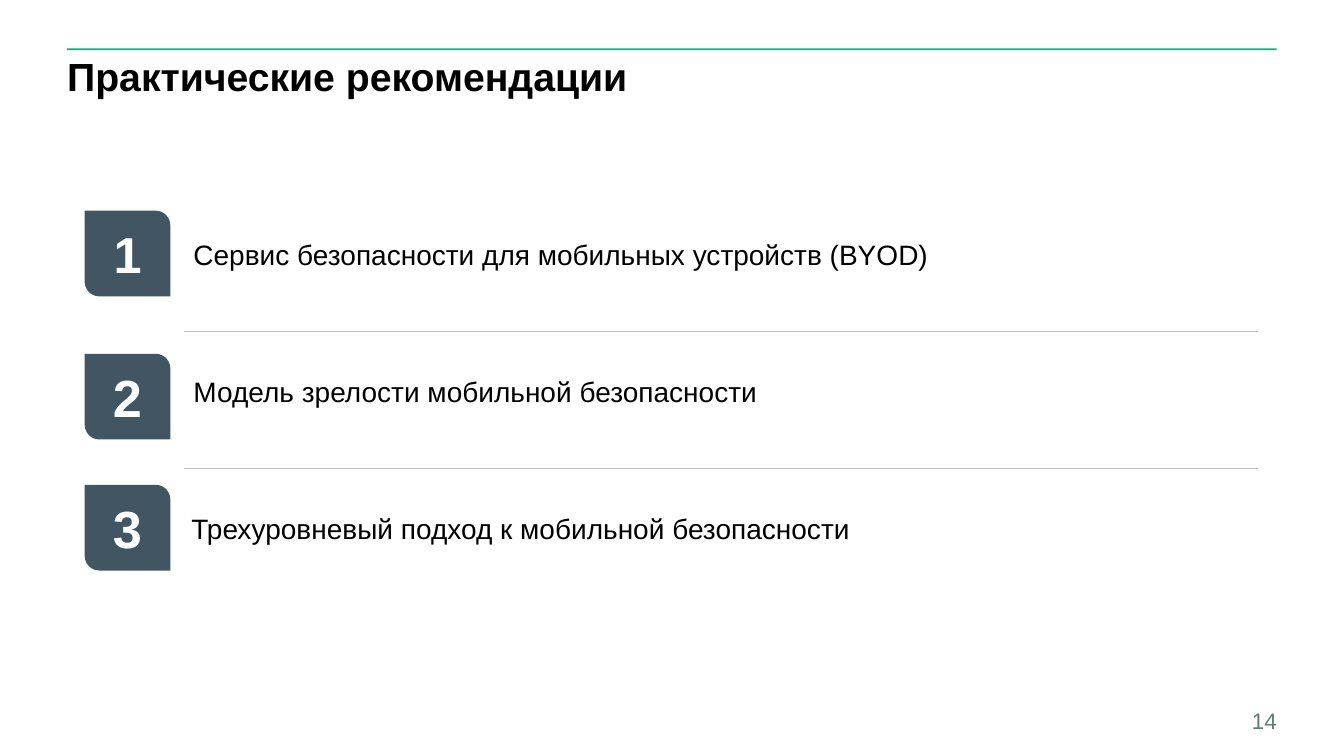
from dataclasses import dataclass, field
from typing import Any

from lxml import etree
from pptx import Presentation
from pptx import util as u
from pptx.dml.color import RGBColor
from pptx.enum import shapes, text
from pptx.oxml import ns

COLUMNS, ROWS = 80, 45


@dataclass(frozen=True)
class Theme:
    font: str = "Arial"
    accent: str = "00B388"
    badge: str = "425563"
    divider: str = "BFBFBF"
    ink: str = "000000"
    light: str = "FFFFFF"
    page_number: str = "617D78"
    title_size: float = 28
    item_size: float = 20
    number_size: float = 16


@dataclass(frozen=True)
class Area:
    column: float
    row: float
    columns: float
    rows: float


@dataclass(frozen=True)
class Recommendation:
    wording: str
    badge_row: float
    badge_size: float = 37.3
    text_column: float = 10.92


@dataclass(frozen=True)
class TextStyle:
    size: float
    color: str
    bold: bool = False
    frame: dict[str, Any] = field(default_factory=dict)
    para: dict[str, Any] = field(default_factory=dict)


THEME = Theme()
NO_MARGINS = dict.fromkeys(
    ("margin_left", "margin_top", "margin_right", "margin_bottom"), 0)
MIDDLE = {"word_wrap": True, "vertical_anchor": text.MSO_ANCHOR.MIDDLE}

RECOMMENDATIONS = [
    Recommendation("Сервис безопасности для мобильных устройств (BYOD)", 12.54, 36),
    Recommendation("Модель зрелости мобильной безопасности", 21.06),
    Recommendation("Трехуровневый подход к мобильной безопасности", 28.86,
                   text_column=10.8),
]
FIRST_ROW, ROW_STEP, ITEM_ROWS = 11.94, 8.16, 6.42
DIVIDER_OFFSET, DIVIDER_LEFT, DIVIDER_RIGHT = 7.8, 10.98, 74.88
BADGE_LEFT, BADGE_SIDE = 5.04, 5.1


def across(columns: float) -> int:
    return u.Inches(columns * 13.333 / COLUMNS)


def down(rows: float) -> int:
    return u.Inches(rows * 7.5 / ROWS)


def bounds(area: Area) -> tuple[int, int, int, int]:
    return (across(area.column), down(area.row),
            across(area.columns), down(area.rows))


def apply(target: Any, values: dict[str, Any]) -> None:
    for name, value in values.items():
        setattr(target, name, value)


def write(box: Any, wording: str, style: TextStyle) -> None:
    frame = box.text_frame
    apply(frame, style.frame)
    para = frame.paragraphs[0]
    apply(para, style.para)
    span = para.add_run()
    span.text = wording
    apply(span.font, {"name": THEME.font, "size": u.Pt(style.size),
                      "bold": style.bold})
    span.font.color.rgb = RGBColor.from_string(style.color)


def add_block(page: Any, kind: shapes.MSO_SHAPE, area: Area, color: str) -> Any:
    block = page.shapes.add_shape(kind, *bounds(area))
    block.shadow.inherit = False
    block.fill.solid()
    block.fill.fore_color.rgb = RGBColor.from_string(color)
    block.line.fill.background()
    return block


def add_text(page: Any, area: Area, wording: str, style: TextStyle) -> None:
    write(page.shapes.add_textbox(*bounds(area)), wording, style)


def add_divider(page: Any, row: float) -> None:
    divider = page.shapes.add_connector(
        shapes.MSO_CONNECTOR.STRAIGHT,
        across(DIVIDER_LEFT), down(row), across(DIVIDER_RIGHT), down(row))
    divider.line.color.rgb = RGBColor.from_string(THEME.divider)
    divider.line.width = u.Pt(1)
    etree.SubElement(divider._element.spPr, ns.qn("a:effectLst"))


def add_title(page: Any, wording: str) -> None:
    title = page.shapes.title
    left, top, width, height = bounds(Area(4, 3.42, 72, 5.58))
    apply(title, {"left": left, "top": top, "width": width, "height": height})
    write(title, wording, TextStyle(
        THEME.title_size, THEME.ink, True,
        {**NO_MARGINS, "word_wrap": True, "auto_size": text.MSO_AUTO_SIZE.NONE,
         "vertical_anchor": text.MSO_ANCHOR.TOP},
        {"alignment": text.PP_ALIGN.LEFT, "line_spacing": 0.9}))


def add_recommendation(page: Any, index: int, item: Recommendation) -> None:
    row = FIRST_ROW + index * ROW_STEP
    badge = add_block(page, shapes.MSO_SHAPE.ROUND_2_DIAG_RECTANGLE,
                      Area(BADGE_LEFT, item.badge_row, BADGE_SIDE, BADGE_SIDE),
                      THEME.badge)
    badge.adjustments[0] = 0
    badge.adjustments[1] = 0.17
    write(badge, str(index + 1), TextStyle(
        item.badge_size, THEME.light, True, MIDDLE,
        {"alignment": text.PP_ALIGN.CENTER}))
    add_text(page, Area(item.text_column, row, 64, ITEM_ROWS), item.wording,
             TextStyle(THEME.item_size, THEME.ink, frame=MIDDLE))
    if index < len(RECOMMENDATIONS) - 1:
        add_divider(page, row + DIVIDER_OFFSET)


def main() -> None:
    deck = Presentation()
    deck.slide_width, deck.slide_height = across(COLUMNS), down(ROWS)
    page = deck.slides.add_slide(deck.slide_layouts.get_by_name("Title Only"))
    add_block(page, shapes.MSO_SHAPE.RECTANGLE, Area(4, 2.88, 72, 0.11), THEME.accent)
    add_title(page, "Практические рекомендации")
    for index, item in enumerate(RECOMMENDATIONS):
        add_recommendation(page, index, item)
    add_text(page, Area(72.5, 42.18, 3.5, 1.5), "14", TextStyle(
        THEME.number_size, THEME.page_number,
        frame={**NO_MARGINS, "word_wrap": False,
               "vertical_anchor": text.MSO_ANCHOR.BOTTOM},
        para={"alignment": text.PP_ALIGN.RIGHT}))
    deck.save("out.pptx")


if __name__ == "__main__":
    main()
